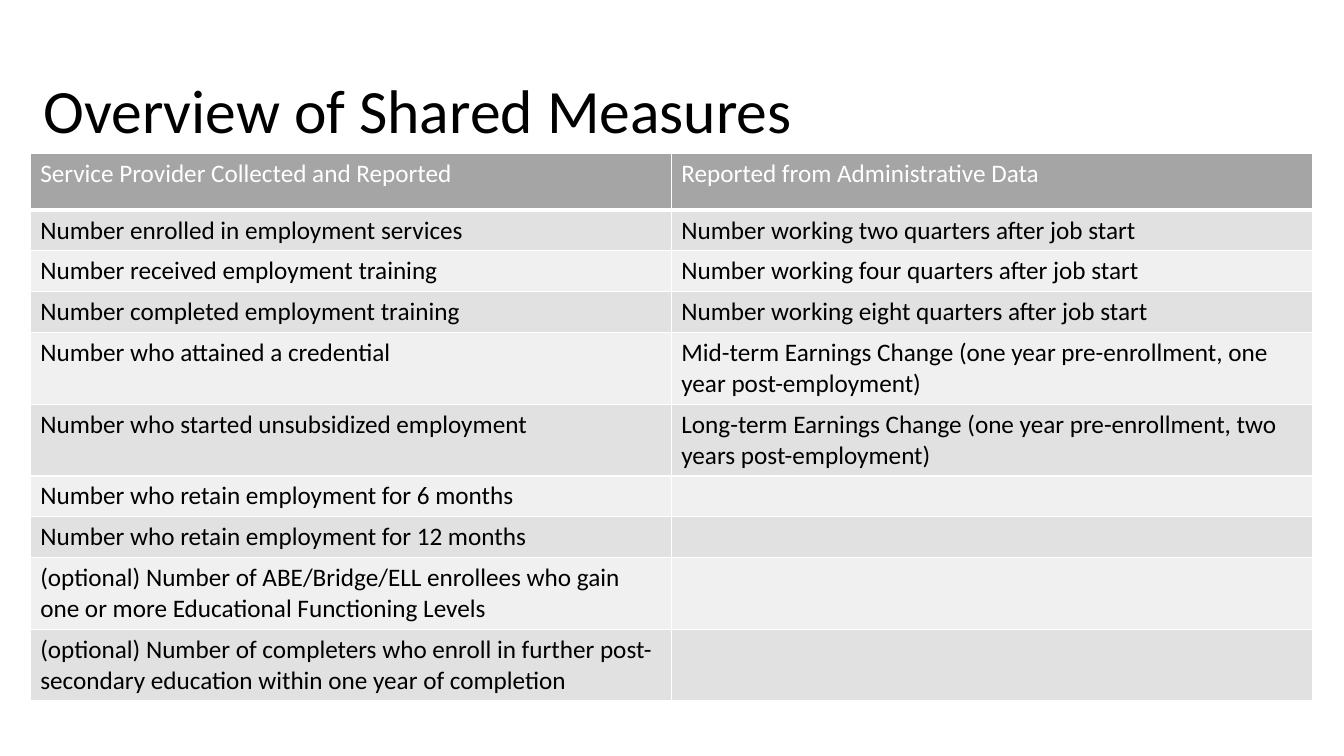
"""Build the Overview of Shared Measures slide."""
import dataclasses

import lxml.etree
import pptx
import pptx.dml.color
import pptx.enum.text
import pptx.oxml.ns
import pptx.util

Pt = pptx.util.Pt

TITLE = "Overview of Shared Measures"
HEADINGS = ("Service Provider Collected and Reported", "Reported from Administrative Data")
PROVIDER_MEASURES = [
    "Number enrolled in employment services",
    "Number received employment training",
    "Number completed employment training",
    "Number who attained a credential",
    "Number who started unsubsidized employment",
    "Number who retain employment for 6 months",
    "Number who retain employment for 12 months",
    "(optional) Number of ABE/Bridge/ELL enrollees who gain one or more Educational Functioning Levels",
    "(optional) Number of completers who enroll in further post-secondary education within one year of completion",
]
ADMINISTRATIVE_MEASURES = [
    "Number working two quarters after job start",
    "Number working four quarters after job start",
    "Number working eight quarters after job start",
    "Mid-term Earnings Change (one year pre-enrollment, one year post-employment)",
    "Long-term Earnings Change (one year pre-enrollment, two years post-employment)",
]


@dataclasses.dataclass(frozen=True)
class Theme:
    """Hold the colours, font and type sizes."""
    font: str = "Calibri"
    title_size: int = 44
    table_size: int = 18
    ink: str = "000000"
    white: str = "FFFFFF"
    header: str = "A5A5A5"
    bands: tuple = ("E1E1E1", "F0F0F0")


THEME = Theme()
PAGE_WIDTH, PAGE_HEIGHT = 960, 540
TITLE_BOX = (23.76, 28.8, 828, 104.4)
TABLE_LEFT, TABLE_TOP, COLUMN_WIDTH = 21.6, 109.5, 457.92
HEADER_HEIGHT, SINGLE_HEIGHT, DOUBLE_HEIGHT = 40.5, 29, 51.2
LINE_CAPACITY = 60
RULE, HEADER_RULE = 1, 3


def rgb(value):
    """Turn a hex string into a colour."""
    return pptx.dml.color.RGBColor.from_string(value)


def add_text(para, text, size, color):
    """Add one formatted run to a paragraph."""
    span = para.add_run()
    span.text = text
    span.font.name = THEME.font
    span.font.size = Pt(size)
    span.font.bold = False
    span.font.color.rgb = rgb(color)


def add_borders(cell, bottom):
    """Draw white rules on the four sides of a cell."""
    properties = cell._tc.get_or_add_tcPr()
    widths = {"a:lnL": RULE, "a:lnR": RULE, "a:lnT": RULE, "a:lnB": bottom}
    for position, (side, width) in enumerate(widths.items()):
        line = lxml.etree.Element(pptx.oxml.ns.qn(side), w=str(Pt(width)))
        fill = lxml.etree.SubElement(line, pptx.oxml.ns.qn("a:solidFill"))
        lxml.etree.SubElement(fill, pptx.oxml.ns.qn("a:srgbClr"), val=THEME.white)
        properties.insert(position, line)


def add_title(page):
    """Place and format the title placeholder."""
    box = page.shapes.title
    box.left, box.top, box.width, box.height = map(Pt, TITLE_BOX)
    frame = box.text_frame
    frame.word_wrap = True
    frame.vertical_anchor = pptx.enum.text.MSO_ANCHOR.MIDDLE
    para = frame.paragraphs[0]
    para.alignment = pptx.enum.text.PP_ALIGN.LEFT
    para.line_spacing = 0.9
    add_text(para, TITLE, THEME.title_size, THEME.ink)


def add_measures(page):
    """Add the two-column table of measures."""
    blanks = [""] * (len(PROVIDER_MEASURES) - len(ADMINISTRATIVE_MEASURES))
    rows = [HEADINGS, *zip(PROVIDER_MEASURES, ADMINISTRATIVE_MEASURES + blanks)]
    heights = [HEADER_HEIGHT] + [
        DOUBLE_HEIGHT if max(map(len, row)) > LINE_CAPACITY else SINGLE_HEIGHT
        for row in rows[1:]
    ]
    table = page.shapes.add_table(
        len(rows), len(HEADINGS), Pt(TABLE_LEFT), Pt(TABLE_TOP),
        Pt(COLUMN_WIDTH * len(HEADINGS)), Pt(sum(heights)),
    ).table
    for column in table.columns:
        column.width = Pt(COLUMN_WIDTH)
    for index, (row, height) in enumerate(zip(rows, heights)):
        table.rows[index].height = Pt(height)
        is_header = index == 0
        fill = THEME.header if is_header else THEME.bands[(index - 1) % 2]
        for column, text in enumerate(row):
            cell = table.cell(index, column)
            cell.fill.solid()
            cell.fill.fore_color.rgb = rgb(fill)
            add_borders(cell, HEADER_RULE if is_header else RULE)
            if text:
                color = THEME.white if is_header else THEME.ink
                add_text(cell.text_frame.paragraphs[0], text, THEME.table_size, color)


def main():
    """Build and save the deck."""
    deck = pptx.Presentation()
    deck.slide_width, deck.slide_height = Pt(PAGE_WIDTH), Pt(PAGE_HEIGHT)
    page = deck.slides.add_slide(deck.slide_layouts.get_by_name("Title Only"))
    add_title(page)
    add_measures(page)
    deck.save("out.pptx")


if __name__ == "__main__":
    main()
